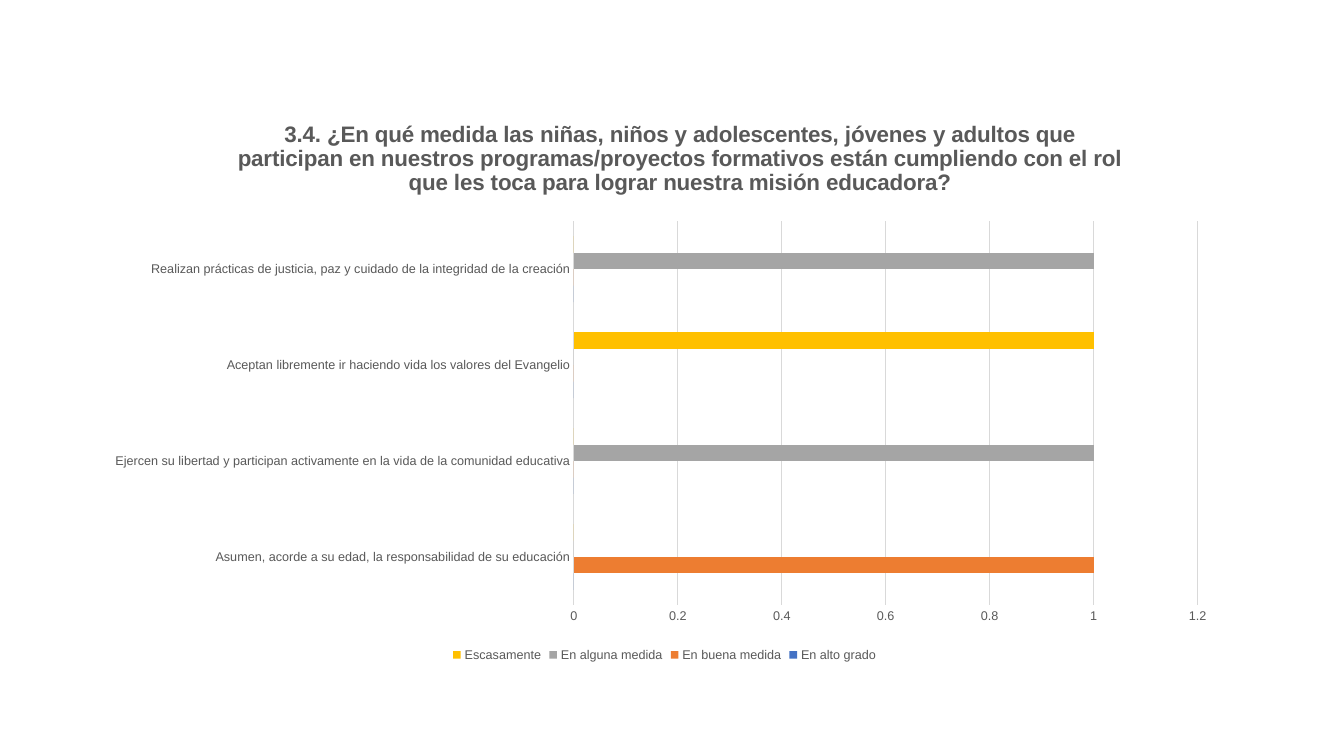
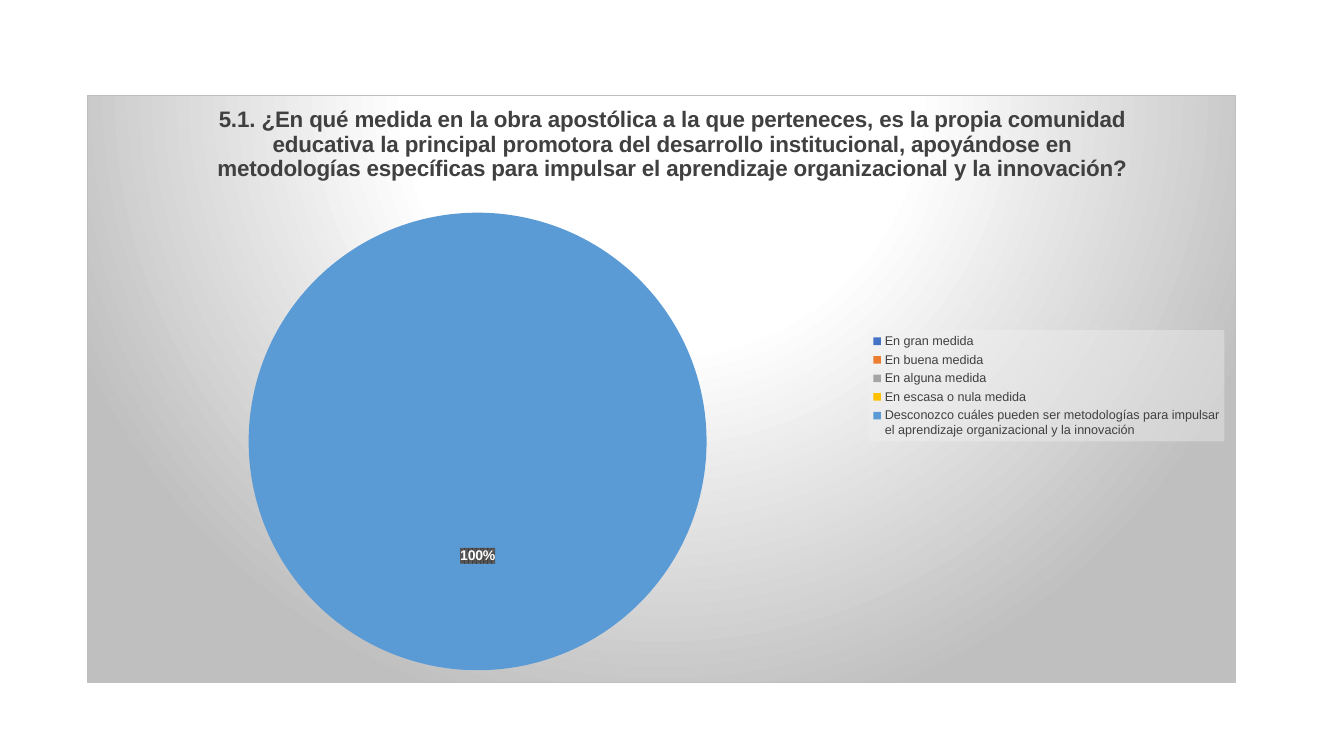
from lxml import etree
from pptx import Presentation, util as u
from pptx.chart.data import CategoryChartData
from pptx.dml.color import RGBColor
from pptx.enum import chart as ch
from pptx.oxml.ns import qn, nsdecls

FONT = "Arial"
C = {
    "blue": "4472C4", "orange": "ED7D31", "grey": "A5A5A5", "yellow": "FFC000",
    "sky": "5B9BD5", "white": "FFFFFF", "black": "000000", "text": "595959",
    "dark": "404040", "grid": "D9D9D9", "edge": "BFBFBF", "pale": "F2F2F2",
}


def rgb(name):
    return RGBColor.from_string(C[name])


def style_font(font, size, color, bold=False):
    font.name, font.size, font.bold = FONT, u.Pt(size), bold
    font.color.rgb = rgb(color)


def style_line(line, color):
    line.color.rgb = rgb(color)
    line.width = u.Pt(0.75)


def set_layout(el, x, y, w=None, h=None, after=None, inner=False):
    """Place a chart part by fractions of the chart box."""
    for old in el.findall(qn("c:layout")):
        el.remove(old)
    layout = etree.Element(qn("c:layout"))
    manual = etree.SubElement(layout, qn("c:manualLayout"))
    values = [("layoutTarget", "inner")] if inner else []
    values += [("xMode", "edge"), ("yMode", "edge"), ("x", x), ("y", y), ("w", w), ("h", h)]
    for tag, val in values:
        if val is not None:
            etree.SubElement(manual, qn("c:" + tag)).set("val", str(val))
    if after:
        el.find(qn(after)).addnext(layout)
    else:
        el.insert(0, layout)


def add_fill(el, inner_xml):
    """Give a chart part shape properties, ahead of its text properties."""
    sp_pr = etree.fromstring(f"<c:spPr {nsdecls('c', 'a')}>{inner_xml}</c:spPr>")
    el.find(qn("c:txPr")).addprevious(sp_pr)


def color_xml(name, extra=""):
    return f'<a:srgbClr val="{C[name]}">{extra}</a:srgbClr>'


def add_chart(s, kind, box, data, title, title_at, plot_at, legend_pos, color):
    """Chart with the shared fonts, title style, plot area and legend."""
    chart = s.shapes.add_chart(kind, *(u.Cm(v) for v in box), data).chart
    style_font(chart.font, 10, "black")

    # Title
    chart.has_title = True
    p = chart.chart_title.text_frame.paragraphs[0]
    r = p.add_run()
    r.text = title
    style_font(r.font, 16, color, bold=True)
    set_layout(chart.chart_title._element, *title_at, after="c:tx")

    # Plot area and legend
    set_layout(chart._chartSpace.chart.plotArea, *plot_at, inner=True)
    chart.has_legend = True
    chart.legend.position = legend_pos
    chart.legend.include_in_layout = False
    style_font(chart.legend.font, 9, color)
    return chart


def bar_slide(s, box, title, cats, series):
    data = CategoryChartData()
    data.categories = cats
    for name, _, vals in series:
        data.add_series(name, vals)
    chart = add_chart(s, ch.XL_CHART_TYPE.BAR_CLUSTERED, box, data, title,
                      (0.12, 0.01), (0.42, 0.2, 0.55, 0.69),
                      ch.XL_LEGEND_POSITION.BOTTOM, "text")

    # Bars
    plot = chart.plots[0]
    plot.gap_width, plot.overlap, plot.vary_by_categories = 182, 0, False
    for ser, (_, color, _) in zip(plot.series, series):
        ser.format.fill.solid()
        ser.format.fill.fore_color.rgb = rgb(color)

    # Axes
    for axis in (chart.category_axis, chart.value_axis):
        axis.major_tick_mark = axis.minor_tick_mark = ch.XL_TICK_MARK.NONE
        style_font(axis.tick_labels.font, 9, "text")
    style_line(chart.category_axis.format.line, "grid")
    axis = chart.value_axis
    axis.minimum_scale, axis.maximum_scale, axis.major_unit = 0, 1.2, 0.2
    axis.tick_labels.number_format = "General"
    axis.tick_labels.number_format_is_linked = False
    axis.format.line.fill.background()
    style_line(axis.major_gridlines.format.line, "grid")


def pie_slide(s, box, title, slices):
    data = CategoryChartData()
    data.categories = [name for name, _, _ in slices]
    data.add_series("Series 1", [val for _, _, val in slices])
    chart = add_chart(s, ch.XL_CHART_TYPE.PIE, box, data, title,
                      (0.11, 0.01), (0.14, 0.2, 0.4, 0.78),
                      ch.XL_LEGEND_POSITION.RIGHT, "dark")

    # Background: radial gradient with a thin border
    stops = "".join(f'<a:gs pos="{pos}000">{color_xml(name)}</a:gs>'
                    for pos, name in ((0, "white"), (39, "white"), (100, "edge")))
    add_fill(chart._chartSpace,
             f'<a:gradFill><a:gsLst>{stops}</a:gsLst><a:path path="circle">'
             '<a:fillToRect l="50000" t="-80000" r="50000" b="180000"/></a:path></a:gradFill>'
             f'<a:ln w="9525"><a:solidFill>{color_xml("edge")}</a:solidFill></a:ln>')

    # Legend panel
    legend = chart.legend._element
    set_layout(legend, 0.68, 0.4, 0.31, 0.19, after="c:legendPos")
    add_fill(legend, f'<a:solidFill>{color_xml("pale", "<a:alpha val=%s/>" % chr(34).join(["", "39000", ""]))}'
                     '</a:solidFill>')

    # Slices
    plot = chart.plots[0]
    plot.vary_by_categories = True
    ser = plot.series[0]
    for i, (_, color, _) in enumerate(slices):
        fill = ser.points[i].format.fill
        fill.solid()
        fill.fore_color.rgb = rgb(color)

    # Percentage label on a dark patterned plate
    labels = ser.data_labels
    labels.show_value, labels.show_percentage = False, True
    labels.position = ch.XL_LABEL_POSITION.CENTER
    style_font(labels.font, 10, "white", bold=True)
    add_fill(labels._element,
             f'<a:pattFill prst="pct75"><a:fgClr>{color_xml("dark")}</a:fgClr>'
             f'<a:bgClr>{color_xml("text")}</a:bgClr></a:pattFill>')


def main():
    prs = Presentation()
    prs.slide_width, prs.slide_height = u.Cm(33.87), u.Cm(19.05)
    blank = prs.slide_layouts[6]

    bar_slide(
        prs.slides.add_slide(blank), (2.46, 2.77, 28.58, 14.02),
        "3.4. ¿En qué medida las niñas, niños y adolescentes, jóvenes y adultos que "
        "participan en nuestros programas/proyectos formativos están cumpliendo con el rol "
        "que les toca para lograr nuestra misión educadora?",
        ["Asumen, acorde a su edad, la responsabilidad de su educación",
         "Ejercen su libertad y participan activamente en la vida de la comunidad educativa",
         "Aceptan libremente ir haciendo vida los valores del Evangelio",
         "Realizan prácticas de justicia, paz y cuidado de la integridad de la creación"],
        [("En alto grado", "blue", (0, 0, 0, 0)),
         ("En buena medida", "orange", (1, 0, 0, 0)),
         ("En alguna medida", "grey", (0, 1, 0, 1)),
         ("Escasamente", "yellow", (0, 0, 1, 0))])

    pie_slide(
        prs.slides.add_slide(blank), (2.18, 2.39, 28.98, 14.81),
        "5.1. ¿En qué medida en la obra apostólica a la que perteneces, es la propia comunidad "
        "educativa la principal promotora del desarrollo institucional, apoyándose en "
        "metodologías específicas para impulsar el aprendizaje organizacional y la innovación?",
        [("En gran medida", "blue", 0),
         ("En buena medida", "orange", 0),
         ("En alguna medida", "grey", 0),
         ("En escasa o nula medida", "yellow", 0),
         ("Desconozco cuáles pueden ser metodologías para impulsar "
          "el aprendizaje organizacional y la innovación", "sky", 100)])

    prs.save("out.pptx")


if __name__ == "__main__":
    main()
